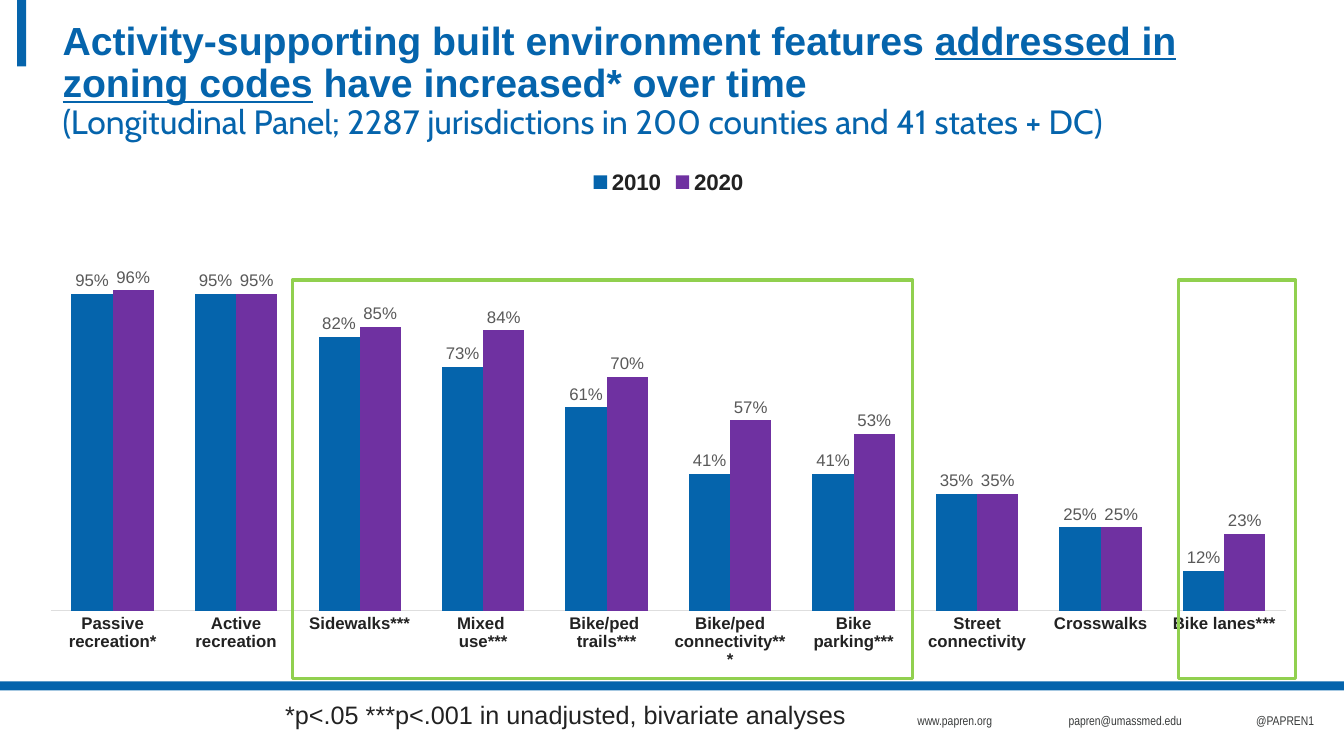
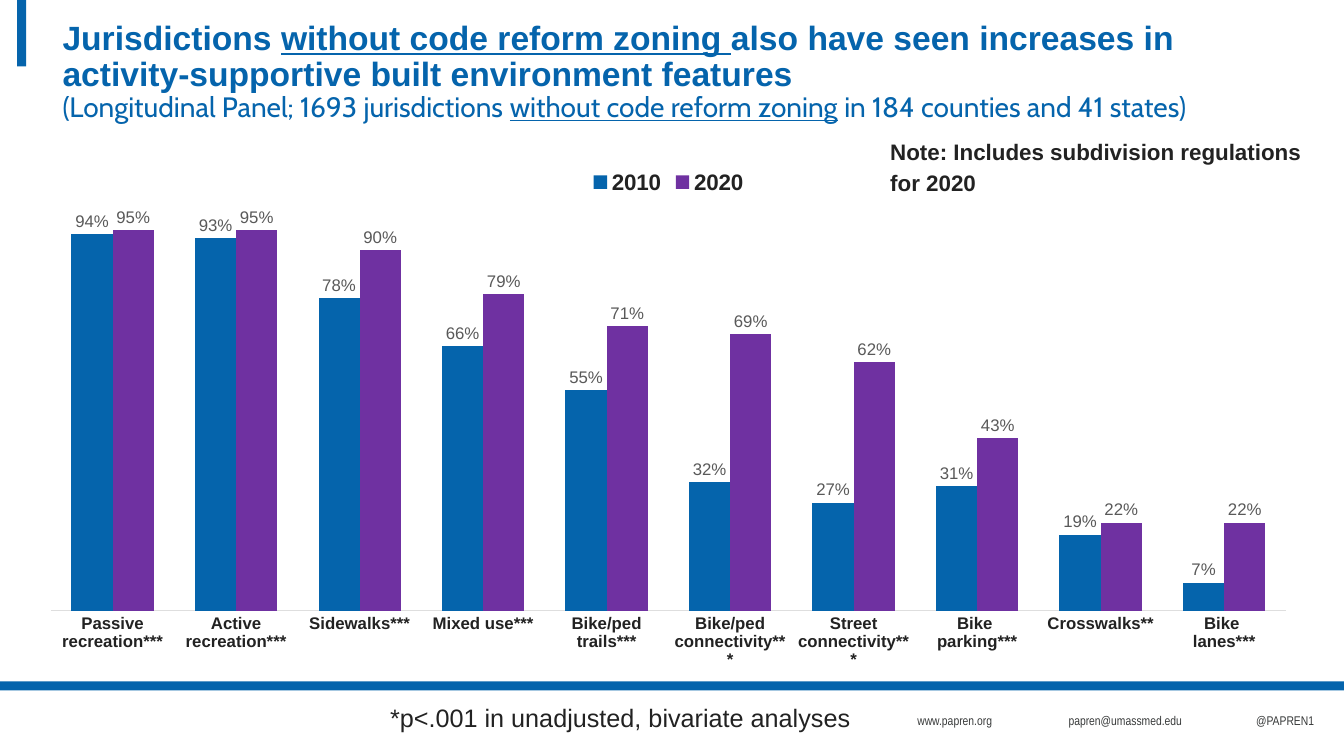
from dataclasses import dataclass

from pptx import Presentation
from pptx.chart.data import CategoryChartData
from pptx.dml.color import RGBColor
from pptx.enum.chart import XL_CHART_TYPE, XL_LABEL_POSITION, XL_LEGEND_POSITION, XL_TICK_MARK
from pptx.enum.shapes import MSO_SHAPE
from pptx.enum.text import MSO_ANCHOR, MSO_AUTO_SIZE, PP_ALIGN
from pptx.oxml import parse_xml
from pptx.oxml.ns import nsdecls
from pptx.util import Inches, Pt

COLUMNS = XL_CHART_TYPE.COLUMN_CLUSTERED
OUTSIDE_END = XL_LABEL_POSITION.OUTSIDE_END
LEGEND_TOP = XL_LEGEND_POSITION.TOP
NO_TICK = XL_TICK_MARK.NONE
RECTANGLE = MSO_SHAPE.RECTANGLE
TOP = MSO_ANCHOR.TOP
NO_AUTOFIT = MSO_AUTO_SIZE.NONE
LEFT = PP_ALIGN.LEFT
TITLE_ONLY = 5


@dataclass(frozen=True)
class Theme:
    blue: str = "0564AC"
    purple: str = "6F31A1"
    green: str = "91D04F"
    ink: str = "222222"
    footer_gray: str = "383A3A"
    label_gray: str = "595959"
    axis_gray: str = "DEDEDE"
    body_font: str = "Arial"
    footer_font: str = "Arial Narrow"
    subtitle_font: str = "Cabin"
    footer_size: float = 9
    chart_size: float = 10
    label_size: float = 12
    note_size: float = 16
    caption_size: float = 18
    percent: str = "0%"


class Deck:
    FOOTERS = (
        ("www.papren.org", 9, 0.96),
        ("papren@umassmed.edu", 10.5, 1.34),
        ("@PAPREN1", 12.36, 0.79),
    )
    PLOT_AREA = {"x": 0.02, "y": 0.1, "w": 0.96, "h": 0.77}

    def __init__(self, theme):
        self.theme = theme
        self.presentation = Presentation()
        self.presentation.slide_width = Inches(13.33)
        self.presentation.slide_height = Inches(7.5)
        self.slide = None

    def style(self, font, size, color, name=None, bold=False):
        font.name = name or self.theme.body_font
        font.size = Pt(size)
        font.bold = bold
        font.color.rgb = RGBColor.from_string(color)

    def new_slide(self):
        layout = self.presentation.slide_layouts[TITLE_ONLY]
        self.slide = self.presentation.slides.add_slide(layout)
        self.rectangle(0, 6.76, 13.33, 0.09, fill=self.theme.blue)
        self.rectangle(0.17, 0, 0.09, 0.66, fill=self.theme.blue)
        for text, left, width in self.FOOTERS:
            self.text([text], left, 7.02, width, 0.25, self.theme.footer_size,
                      self.theme.footer_gray, self.theme.footer_font)

    def rectangle(self, left, top, width, height, fill=None, outline=None):
        shape = self.slide.shapes.add_shape(
            RECTANGLE, Inches(left), Inches(top), Inches(width), Inches(height))
        shape.shadow.inherit = False
        if fill:
            shape.fill.solid()
            shape.fill.fore_color.rgb = RGBColor.from_string(fill)
        else:
            shape.fill.background()
        if outline:
            shape.line.color.rgb = RGBColor.from_string(outline)
            shape.line.width = Pt(2.5)
        else:
            shape.line.fill.background()

    def text(self, lines, left, top, width, height, size, color, name=None, bold=False):
        shape = self.slide.shapes.add_textbox(
            Inches(left), Inches(top), Inches(width), Inches(height))
        frame = shape.text_frame
        frame.word_wrap = False
        for index, line in enumerate(lines):
            paragraph = frame.add_paragraph() if index else frame.paragraphs[0]
            if index:
                paragraph.space_before = Pt(3)
            run = paragraph.add_run()
            run.text = line
            self.style(run.font, size, color, name, bold)
        return frame

    def title(self, heading, subtitle, size):
        shape = self.slide.shapes.title
        shape.left, shape.top = Inches(0.62), Inches(0.21)
        shape.width, shape.height = Inches(12.08), Inches(0.89)
        frame = shape.text_frame
        self.clear_margins(frame)
        frame.word_wrap = True
        frame.auto_size = NO_AUTOFIT
        frame.vertical_anchor = TOP
        rows = (
            (frame.paragraphs[0], heading, size, self.theme.body_font, True),
            (frame.add_paragraph(), subtitle, size - 4, self.theme.subtitle_font, False),
        )
        for paragraph, parts, part_size, name, bold in rows:
            paragraph.alignment = LEFT
            paragraph.line_spacing = 0.9
            for text, underlined in parts:
                run = paragraph.add_run()
                run.text = text
                self.style(run.font, part_size, self.theme.blue, name, bold)
                run.font.underline = underlined

    def clear_margins(self, frame):
        frame.margin_left = frame.margin_right = 0
        frame.margin_top = frame.margin_bottom = 0

    def caption(self, text, left, top, width):
        self.text([text], left, top, width, 0.4, self.theme.caption_size, self.theme.ink)

    def note(self, lines):
        frame = self.text(lines, 8.83, 1.37, 4.1, 0.6, self.theme.note_size,
                          self.theme.ink, bold=True)
        self.clear_margins(frame)
        frame.word_wrap = True

    def highlight(self, left, width):
        self.rectangle(left, 2.78, width, 3.95, outline=self.theme.green)

    def chart(self, rows, maximum):
        theme = self.theme
        categories, before, after = zip(*rows)
        data = CategoryChartData(number_format=theme.percent)
        data.categories = categories
        data.add_series("2010", before)
        data.add_series("2020", after)
        chart = self.slide.shapes.add_chart(
            COLUMNS, Inches(0.25), Inches(1.57), Inches(12.76), Inches(5.16), data).chart
        self.style(chart.font, theme.chart_size, theme.ink)
        chart.has_title = False
        chart.has_legend = True
        chart.legend.position = LEGEND_TOP
        chart.legend.include_in_layout = False
        self.style(chart.legend.font, theme.note_size, theme.ink, bold=True)

        value_axis = chart.value_axis
        value_axis.minimum_scale = 0
        value_axis.maximum_scale = maximum
        value_axis.has_major_gridlines = False
        value_axis.visible = False
        category_axis = chart.category_axis
        category_axis.major_tick_mark = NO_TICK
        category_axis.format.line.color.rgb = RGBColor.from_string(theme.axis_gray)
        category_axis.format.line.width = Pt(0.75)
        self.style(category_axis.tick_labels.font, theme.label_size, theme.ink, bold=True)

        plot = chart.plots[0]
        plot.gap_width = 100
        plot.overlap = 0
        plot.vary_by_categories = False
        for series, color in zip(plot.series, (theme.blue, theme.purple)):
            series.format.fill.solid()
            series.format.fill.fore_color.rgb = RGBColor.from_string(color)
            labels = series.data_labels
            labels.show_value = True
            labels.position = OUTSIDE_END
            labels.number_format = theme.percent
            labels.number_format_is_linked = False
            self.style(labels.font, theme.label_size, theme.label_gray)
        self.place_plot(chart)

    def place_plot(self, chart):
        plot_area = chart.element.xpath("c:chart/c:plotArea")[0]
        for layout in plot_area.xpath("c:layout"):
            plot_area.remove(layout)
        sizes = "".join(f'<c:{key} val="{value}"/>' for key, value in self.PLOT_AREA.items())
        plot_area.insert(0, parse_xml(
            f'<c:layout {nsdecls("c")}><c:manualLayout><c:layoutTarget val="inner"/>'
            f'<c:xMode val="edge"/><c:yMode val="edge"/>{sizes}'
            '</c:manualLayout></c:layout>'))


ALL_JURISDICTIONS = (
    ("Passive recreation*", 0.95, 0.96),
    ("Active recreation", 0.95, 0.95),
    ("Sidewalks***", 0.82, 0.85),
    ("Mixed \nuse***", 0.73, 0.84),
    ("Bike/ped \ntrails***", 0.61, 0.7),
    ("Bike/ped connectivity***", 0.41, 0.57),
    ("Bike\nparking***", 0.41, 0.53),
    ("Street connectivity", 0.35, 0.35),
    ("Crosswalks", 0.25, 0.25),
    ("Bike lanes***", 0.12, 0.23),
)
WITHOUT_REFORM = (
    ("Passive recreation***", 0.94, 0.95),
    ("Active recreation***", 0.93, 0.95),
    ("Sidewalks***", 0.78, 0.9),
    ("Mixed use***", 0.66, 0.79),
    ("Bike/ped trails***", 0.55, 0.71),
    ("Bike/ped connectivity***", 0.32, 0.69),
    ("Street connectivity***", 0.27, 0.62),
    ("Bike \nparking***", 0.31, 0.43),
    ("Crosswalks**", 0.19, 0.22),
    ("Bike \nlanes***", 0.07, 0.22),
)


def main():
    deck = Deck(Theme())

    deck.new_slide()
    deck.title(
        [("Activity-supporting built environment features ", False),
         ("addressed in zoning codes", True),
         (" have increased* over time", False)],
        [("(Longitudinal Panel; 2287 jurisdictions in 200 counties and 41 states + DC)", False)],
        28)
    deck.chart(ALL_JURISDICTIONS, 1.2)
    deck.caption("*p<.05 ***p<.001 in unadjusted, bivariate analyses", 2.73, 6.89, 5.81)
    deck.highlight(2.9, 6.15)
    deck.highlight(11.69, 1.16)

    deck.new_slide()
    deck.title(
        [("Jurisdictions ", False),
         ("without code reform zoning ", True),
         ("also have seen increases in activity-supportive built environment features", False)],
        [("(Longitudinal Panel; 1693 jurisdictions ", False),
         ("without code reform zoning", True),
         (" in 184 counties and 41 states)", False)],
        24)
    deck.chart(WITHOUT_REFORM, 1)
    deck.caption("*p<.001 in unadjusted, bivariate analyses", 3.77, 6.92, 4.95)
    deck.note(["Note: Includes subdivision regulations", "for 2020"])

    deck.presentation.save("out.pptx")


if __name__ == "__main__":
    main()
